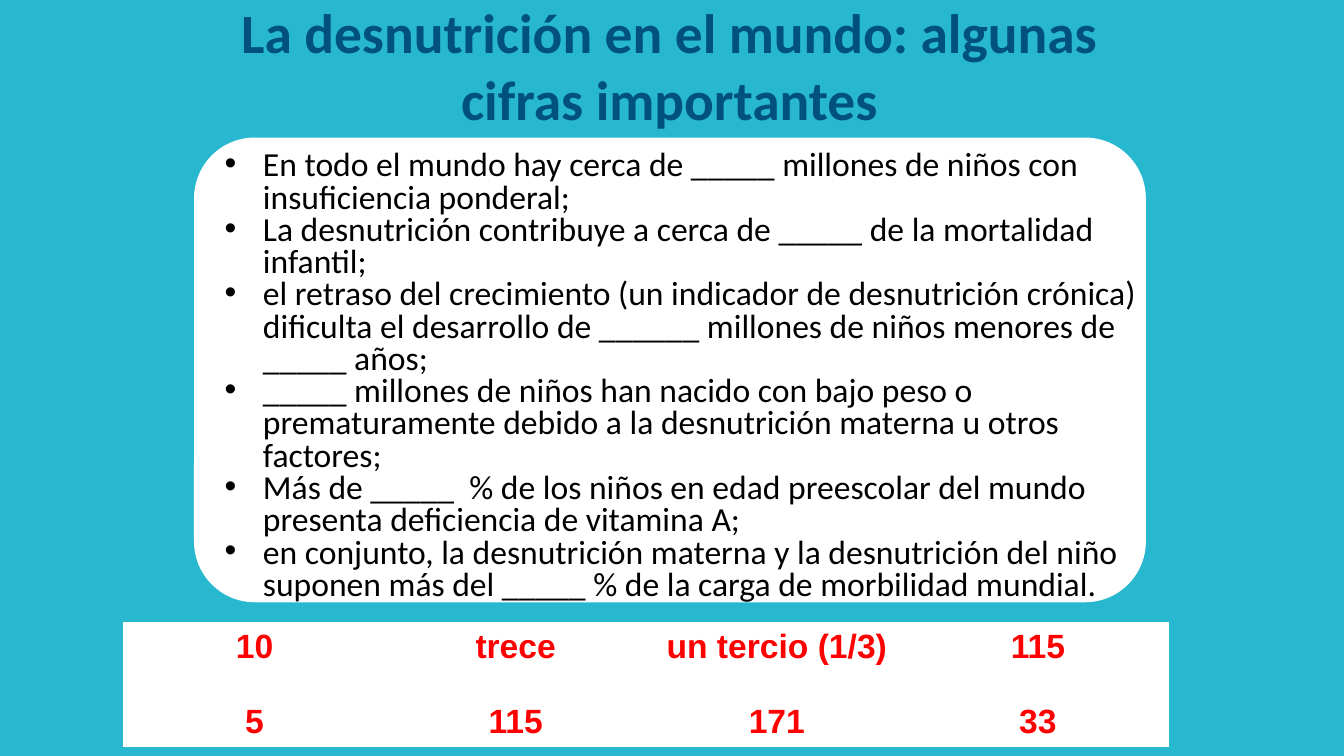
"""Build a slide with a fill-in-the-blanks exercise on world malnutrition."""
from dataclasses import dataclass

from lxml.etree import SubElement
from pptx import Presentation
from pptx.dml.color import RGBColor
from pptx.enum.shapes import MSO_SHAPE
from pptx.enum.text import MSO_ANCHOR, PP_ALIGN
from pptx.oxml.ns import qn
from pptx.util import Inches, Pt


@dataclass(frozen=True)
class Theme:
    background: RGBColor = RGBColor(0x27, 0xB8, 0xCF)
    panel: RGBColor = RGBColor(0xFF, 0xFF, 0xFF)
    heading: RGBColor = RGBColor(0x00, 0x52, 0x7D)
    body: RGBColor = RGBColor(0x00, 0x00, 0x00)
    answer: RGBColor = RGBColor(0xFF, 0x00, 0x00)
    heading_size: float = 39.6
    text_size: float = 24
    text_font: str = "Calibri"
    answer_font: str = "Arial"


theme = Theme()

STATEMENTS = [
    "En todo el mundo hay cerca de _____ millones de niños con insuficiencia ponderal;",
    "La desnutrición contribuye a cerca de _____ de la mortalidad infantil;",
    "el retraso del crecimiento (un indicador de desnutrición crónica) dificulta "
    "el desarrollo de ______ millones de niños menores de _____ años;",
    "_____ millones de niños han nacido con bajo peso o prematuramente "
    "debido a la desnutrición materna u otros factores;",
    "Más de _____  % de los niños en edad preescolar del mundo "
    "presenta deficiencia de vitamina A;",
    "en conjunto, la desnutrición materna y la desnutrición del niño "
    "suponen más del _____ % de la carga de morbilidad mundial.",
]
ANSWERS = [
    ["10", "trece", "un tercio (1/3)", "115"],
    ["5", "115", "171", "33"],
]


def write(frame, *lines, size=theme.text_size, font=theme.text_font, color=theme.body,
          bold=False, align=PP_ALIGN.LEFT, spacing=1.0, bullet=None):
    """Fill a text frame with one formatted paragraph per line."""
    frame.word_wrap = True
    for index, line in enumerate(lines):
        paragraph = frame.add_paragraph() if index else frame.paragraphs[0]
        paragraph.alignment = align
        paragraph.line_spacing = spacing
        run = paragraph.add_run()
        run.text = line
        run.font.size = Pt(size)
        run.font.name = font
        run.font.bold = bold
        run.font.color.rgb = color
        if bullet:
            properties = paragraph._p.get_or_add_pPr()
            properties.set("marL", str(Inches(0.38)))
            properties.set("indent", str(-Inches(0.38)))
            SubElement(properties, qn("a:buFont"), typeface="Arial")
            SubElement(properties, qn("a:buChar"), char=bullet)


presentation = Presentation()
presentation.slide_width = Inches(13.33)
presentation.slide_height = Inches(7.5)
slide = presentation.slides.add_slide(presentation.slide_layouts[6])
slide.background.fill.solid()
slide.background.fill.fore_color.rgb = theme.background

panel = slide.shapes.add_shape(
    MSO_SHAPE.ROUNDED_RECTANGLE, Inches(1.93), Inches(1.37), Inches(9.43), Inches(4.6))
panel.adjustments[0] = 0.13
panel.shadow.inherit = False
panel.fill.solid()
panel.fill.fore_color.rgb = theme.panel
panel.line.color.rgb = theme.panel
panel.line.width = Pt(0.75)

answers = slide.shapes.add_table(
    2, 4, Inches(1.23), Inches(6.18), Inches(10.36), Inches(1.16)).table
answers.first_row = False
answers.horz_banding = False
answers.rows[0].height = Inches(0.75)
answers.rows[1].height = Inches(0.41)
for row, values in enumerate(ANSWERS):
    for column, value in enumerate(values):
        cell = answers.cell(row, column)
        cell.fill.solid()
        cell.fill.fore_color.rgb = theme.panel
        write(cell.text_frame, value, font=theme.answer_font, color=theme.answer,
              bold=True, align=PP_ALIGN.CENTER)

statements = slide.shapes.add_textbox(
    Inches(2.13), Inches(1.45), Inches(9.34), Inches(4.87))
write(statements.text_frame, *STATEMENTS, spacing=0.8, bullet="•")

heading = slide.shapes.add_textbox(
    Inches(1.69), Inches(-0.1), Inches(9.9), Inches(1.49))
heading.text_frame.vertical_anchor = MSO_ANCHOR.MIDDLE
write(heading.text_frame, "La desnutrición en el mundo: algunas cifras importantes",
      size=theme.heading_size, color=theme.heading, bold=True, align=PP_ALIGN.CENTER)

presentation.save("out.pptx")
